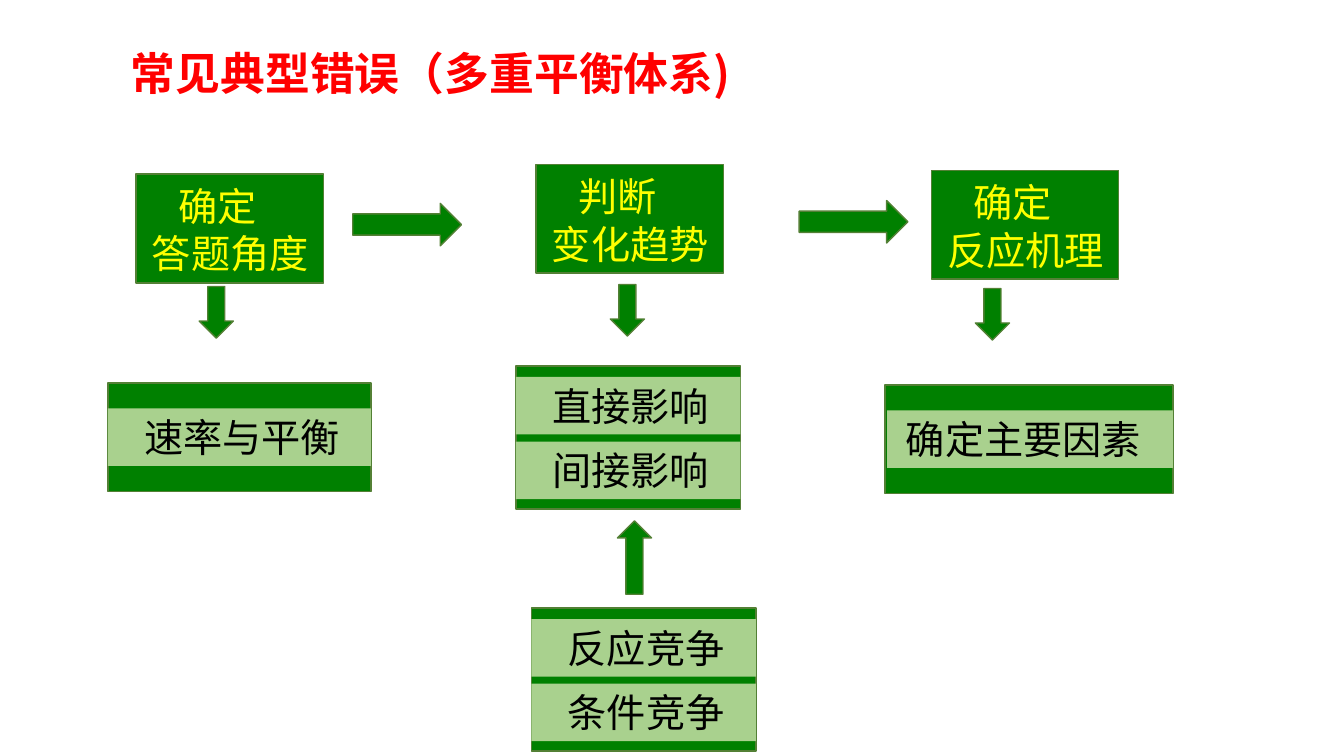
from lxml.etree import SubElement
from pptx import Presentation
from pptx.dml.color import RGBColor
from pptx.enum.shapes import MSO_SHAPE
from pptx.enum.text import MSO_ANCHOR, MSO_AUTO_SIZE, PP_ALIGN
from pptx.oxml.ns import qn
from pptx.util import Cm, Pt

GREEN = RGBColor(0x00, 0x80, 0x00)
DARK_GREEN = RGBColor(0x53, 0x80, 0x35)
LIGHT_GREEN = RGBColor(0xA9, 0xD1, 0x8E)
YELLOW = RGBColor(0xFF, 0xFF, 0x00)
RED = RGBColor(0xFF, 0x00, 0x00)
BLACK = RGBColor(0x00, 0x00, 0x00)

BODY_FONT = "Calibri"
TITLE_FONT = "Noto Sans CJK SC"
INDENT = 0.67
BAR_HEIGHT = 1.45
BAR_PITCH = 1.63


def add_block(shapes, preset, left, top, width, height, fill, outlined=True):
    block = shapes.add_shape(preset, Cm(left), Cm(top), Cm(width), Cm(height))
    block.shadow.inherit = False
    block.fill.solid()
    block.fill.fore_color.rgb = fill
    if outlined:
        block.line.color.rgb = DARK_GREEN
        block.line.width = Pt(1)
    else:
        block.line.fill.background()
    return block


def write_lines(frame, lines, color, size=28, font=BODY_FONT, bold=False):
    """Write (text, left indent in cm) pairs, one paragraph each."""
    frame.word_wrap = True
    frame.auto_size = MSO_AUTO_SIZE.SHAPE_TO_FIT_TEXT
    frame.vertical_anchor = MSO_ANCHOR.TOP
    for number, (text, indent) in enumerate(lines):
        paragraph = frame.add_paragraph() if number else frame.paragraphs[0]
        paragraph.alignment = PP_ALIGN.LEFT
        if indent:
            paragraph._p.get_or_add_pPr().set("marL", str(Cm(indent)))
        run = paragraph.add_run()
        run.text = text
        run.font.size = Pt(size)
        run.font.name = font
        run.font.bold = bold
        run.font.color.rgb = color
        if font == TITLE_FONT:
            SubElement(run._r.get_or_add_rPr(), qn("a:ea")).set("typeface", font)


def add_title(slide, left, top, width, height):
    title = slide.shapes.add_textbox(Cm(left), Cm(top), Cm(width), Cm(height))
    write_lines(title.text_frame, [("常见典型错误（多重平衡体系)", 0)],
                RED, 32, TITLE_FONT, True)


def add_step(slide, left, top, verb, target):
    """Green box with an indented verb above its target."""
    shapes = slide.shapes.add_group_shape().shapes
    add_block(shapes, MSO_SHAPE.RECTANGLE, left, top, 4.72, 2.74, GREEN)
    label = shapes.add_textbox(Cm(left + 0.15), Cm(top + 0.09), Cm(4.65), Cm(2.64))
    write_lines(label.text_frame, [(verb, INDENT), (target, 0)], YELLOW)


def add_panel(slide, left, top, width, height, first_bar, labels,
              indent=INDENT, side=0):
    """Green panel with light bars stacked from first_bar downwards."""
    shapes = slide.shapes.add_group_shape().shapes
    add_block(shapes, MSO_SHAPE.RECTANGLE, left, top, width, height, GREEN)
    for row, label in enumerate(labels):
        bar = add_block(shapes, MSO_SHAPE.RECTANGLE, left + side,
                        top + first_bar + row * BAR_PITCH,
                        width - side, BAR_HEIGHT, LIGHT_GREEN, outlined=False)
        write_lines(bar.text_frame, [(label, indent)], BLACK)


def add_arrow(slide, center_x, center_y, length, thickness, rotation=0):
    arrow = add_block(slide.shapes, MSO_SHAPE.RIGHT_ARROW, center_x - length / 2,
                      center_y - thickness / 2, length, thickness, GREEN)
    arrow.rotation = rotation


def build_slide(presentation):
    slide = presentation.slides.add_slide(presentation.slide_layouts[6])
    add_title(slide, 3.05, 1.04, 25.22, 1.63)

    # Steps from left to right
    add_step(slide, 3.43, 4.39, "确定", "答题角度")
    add_step(slide, 13.51, 4.14, "判断", "变化趋势")
    add_step(slide, 23.47, 4.29, "确定", "反应机理")

    # Arrows between steps, then down to the panels
    for center_x, center_y in ((10.26, 5.66), (21.51, 5.59)):
        add_arrow(slide, center_x, center_y, 2.74, 1.07)
    for center_x, center_y in ((5.45, 7.87), (15.81, 7.82), (25.01, 7.92)):
        add_arrow(slide, center_x, center_y, 1.3, 0.86, 90)

    # Panels under the steps
    add_panel(slide, 2.72, 9.65, 6.63, 2.74, 0.64, ["速率与平衡"])
    add_panel(slide, 13, 9.22, 5.66, 3.61, 0.28, ["直接影响", "间接影响"])
    add_panel(slide, 22.3, 9.7, 7.26, 2.74, 0.64, ["确定主要因素"], 0.22, 0.06)

    # Competing factors feeding the middle panel
    add_arrow(slide, 15.99, 14.05, 1.85, 0.86, 270)
    add_panel(slide, 13.39, 15.32, 5.66, 3.61, 0.28, ["反应竞争", "条件竞争"])


def main():
    presentation = Presentation()
    presentation.slide_width = Cm(33.87)
    presentation.slide_height = Cm(19.05)
    build_slide(presentation)
    presentation.save("out.pptx")


if __name__ == "__main__":
    main()
